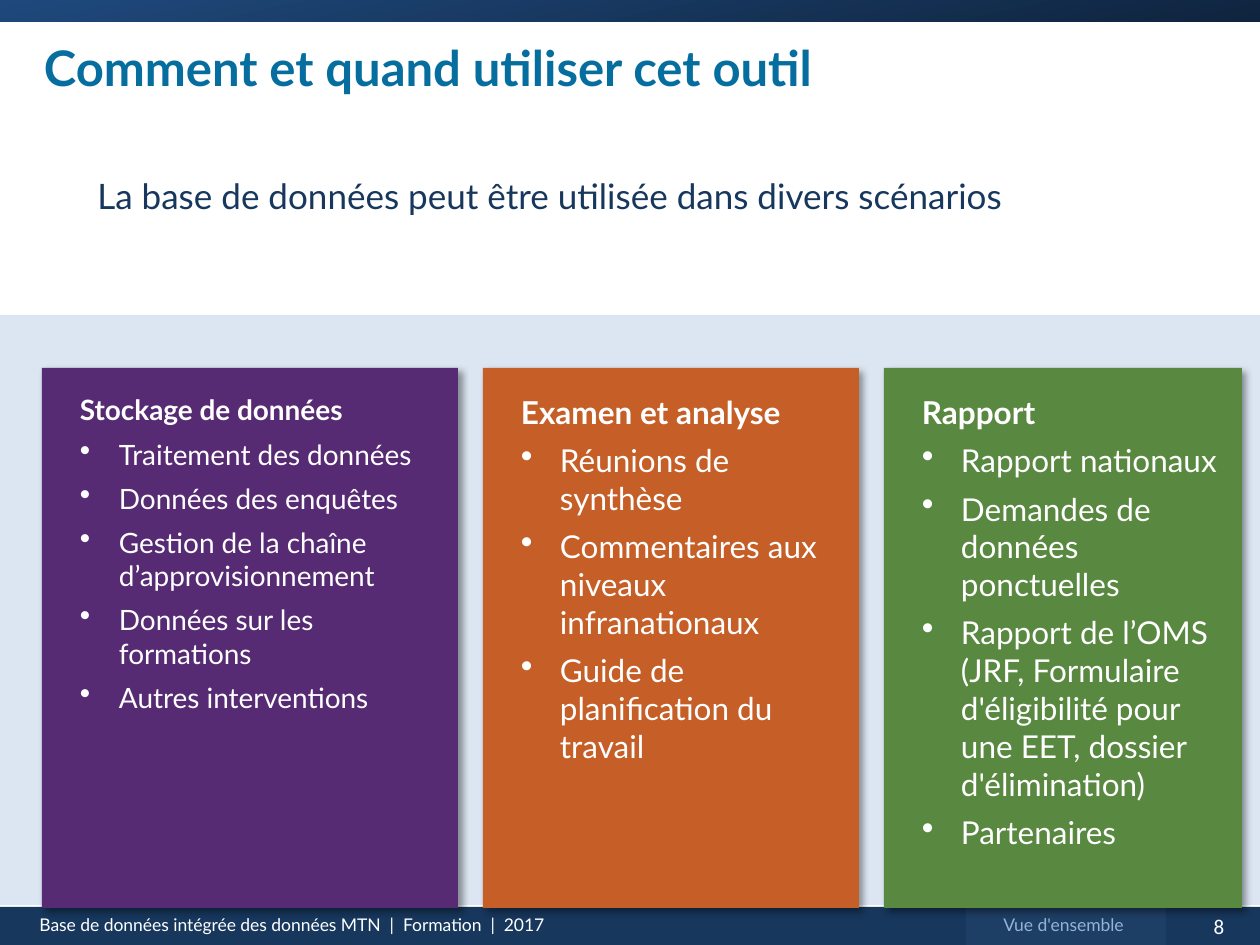
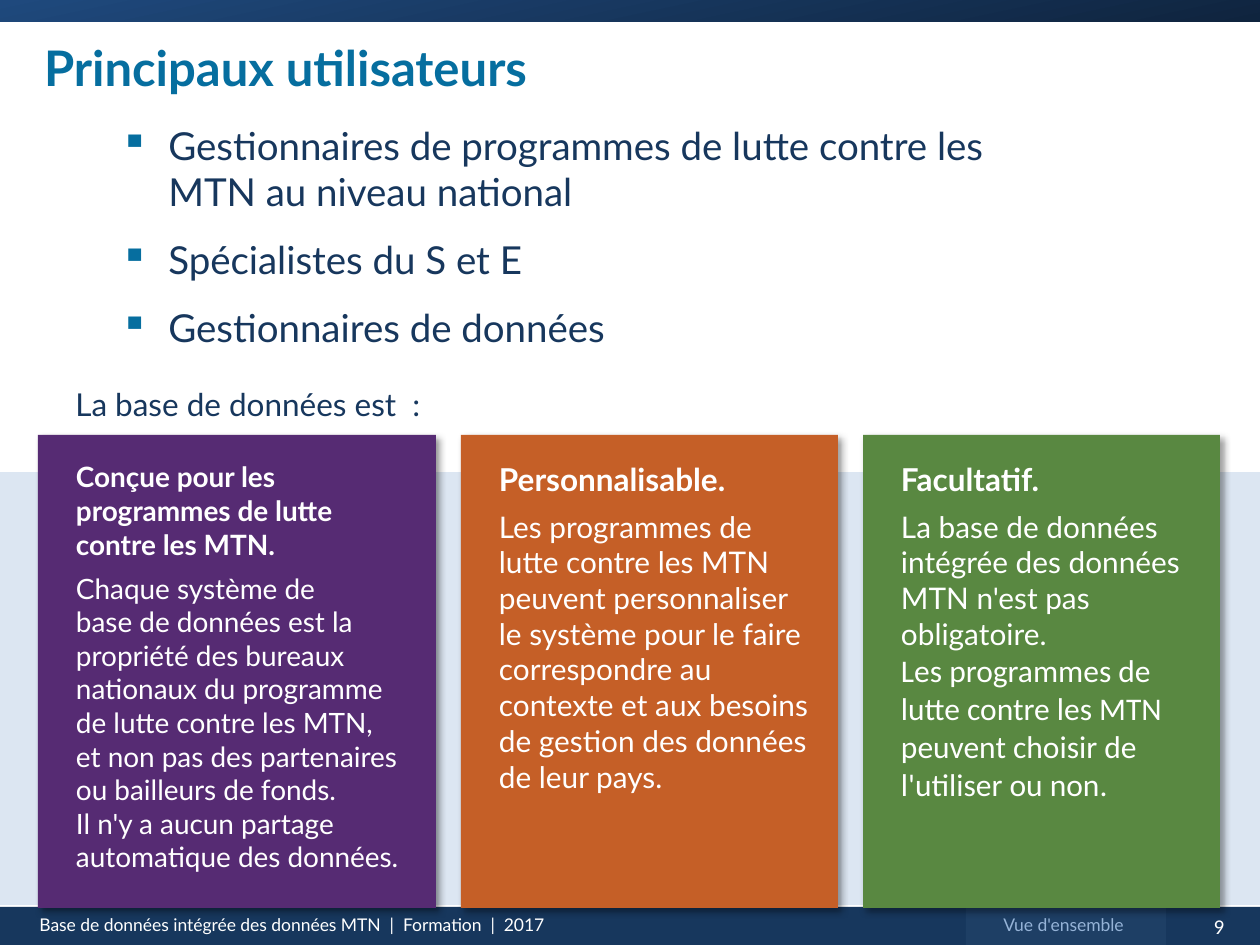
import copy
from collections import namedtuple

import lxml.etree
import pptx
import pptx.dml.color
import pptx.enum.shapes
import pptx.enum.text
import pptx.oxml.ns
import pptx.util

Color = pptx.dml.color.RGBColor
Shape = pptx.enum.shapes.MSO_SHAPE
Align = pptx.enum.text.PP_ALIGN
Anchor = pptx.enum.text.MSO_ANCHOR
qn = pptx.oxml.ns.qn

WHITE = Color(0xFF, 0xFF, 0xFF)
NAVY = Color(0x17, 0x37, 0x5D)
NAVY_TAB = Color(0x1E, 0x3F, 0x65)
BAND_LIGHT = Color(0x1F, 0x49, 0x7D)
BAND_DARK = Color(0x0F, 0x24, 0x3E)
PALE = Color(0xDC, 0xE6, 0xF2)
SOFT_BLUE = Color(0x95, 0xB3, 0xD7)
TEAL = Color(0x06, 0x6E, 0x9F)
PURPLE = Color(0x56, 0x2B, 0x73)
ORANGE = Color(0xC5, 0x5F, 0x27)
GREEN = Color(0x59, 0x88, 0x41)

SLIDE_WIDTH, SLIDE_HEIGHT = 1260, 945
COLUMN_GAP = 25
COLUMN_BOTTOM = 908
PALE_BOTTOM = 905
FOOTER_TOP = 907

Box = namedtuple("Box", "left top width height")
Style = namedtuple(
    "Style",
    "size color bold font align before after margin hang bullet bullet_color bullet_size",
    defaults=(WHITE, False, "Lato", Align.LEFT, 0, 0, 0, 0, None, None, None),
)


def px(length):
    return pptx.util.Emu(round(length * 914400 / 126))


def add_panel(page, box, fill=None, kind=Shape.RECTANGLE):
    panel = page.shapes.add_shape(kind, *map(px, box))
    panel.shadow.inherit = False
    panel.line.fill.background()
    if fill is None:
        panel.fill.background()
    else:
        panel.fill.solid()
        panel.fill.fore_color.rgb = fill
    return panel


def add_shadow(panel):
    effects = panel.element.spPr.find(qn("a:effectLst"))
    shadow = lxml.etree.SubElement(
        effects, qn("a:outerShdw"), blurRad="50800", dist="38100", dir="2700000", algn="tl", rotWithShape="0"
    )
    black = lxml.etree.SubElement(shadow, qn("a:srgbClr"), val="000000")
    lxml.etree.SubElement(black, qn("a:alpha"), val="40000")


def set_margins(frame, left, top, right, bottom):
    frame.margin_left, frame.margin_top = px(left), px(top)
    frame.margin_right, frame.margin_bottom = px(right), px(bottom)


def set_indent(para, style):
    properties = para._p.get_or_add_pPr()
    properties.set("marL", str(px(style.margin)))
    properties.set("indent", str(px(-style.hang)))
    if style.bullet_color is not None:
        tint = lxml.etree.SubElement(properties, qn("a:buClr"))
        lxml.etree.SubElement(tint, qn("a:srgbClr"), val=str(style.bullet_color))
    if style.bullet_size is not None:
        lxml.etree.SubElement(properties, qn("a:buSzPct"), val=str(style.bullet_size * 1000))
    if style.bullet is not None:
        lxml.etree.SubElement(properties, qn("a:buChar"), char=style.bullet)


def format_span(span, style):
    span.font.size = pptx.util.Pt(style.size)
    span.font.name = style.font
    span.font.bold = style.bold
    span.font.color.rgb = style.color


def write_text(frame, items):
    frame.word_wrap = True
    frame.vertical_anchor = Anchor.TOP
    for index, (text, style) in enumerate(items):
        para = frame.add_paragraph() if index else frame.paragraphs[0]
        para.text = text
        para.alignment = style.align
        para.space_before = pptx.util.Pt(style.before)
        para.space_after = pptx.util.Pt(style.after)
        set_indent(para, style)
        for span in para.runs:
            format_span(span, style)
        for line_end in para._p.findall(qn("a:br")):
            line_end.insert(0, copy.deepcopy(para.runs[0]._r.rPr))


def add_text(page, box, items):
    label = page.shapes.add_textbox(*map(px, box))
    write_text(label.text_frame, items)


def add_top_band(page, box):
    band = add_panel(page, box, BAND_LIGHT)
    band.fill.gradient()
    band.fill.gradient_angle = 282
    for stop, color in zip(band.fill.gradient_stops, (BAND_LIGHT, BAND_DARK)):
        stop.color.rgb = color


def add_footer(page, box, number):
    left, top = box.left, box.top
    add_panel(page, box, NAVY)
    add_text(page, Box(left + 1178, top, 82, 38), [(number, Style(12, font="Calibri", align=Align.CENTER))])
    add_text(
        page,
        Box(left + 27, top + 1, 571, 34),
        [("Base de données intégrée des données MTN  |  Formation  |  2017", Style(10))],
    )
    tab = Box(left + 966, top, 200, box.height)
    add_panel(page, tab, NAVY_TAB)
    add_text(
        page,
        Box(tab.left, top + 1, 195, 34),
        [("Vue d'ensemble", Style(10, SOFT_BLUE, align=Align.CENTER))],
    )


def add_title(page, box, text):
    title = add_panel(page, box, kind=Shape.ROUND_2_SAME_RECTANGLE)
    title.adjustments[0] = 0
    write_text(title.text_frame, [(text, Style(28, TEAL, True))])
    title.text_frame.vertical_anchor = Anchor.MIDDLE
    set_margins(title.text_frame, 25, 6, 25, 6)


def add_column(page, box, fill, items):
    column = add_panel(page, box, fill)
    add_shadow(column)
    write_text(column.text_frame, items)
    set_margins(column.text_frame, 38, 25, 25, 0)
    return column


def add_columns(page, left, top, widths, contents):
    columns = []
    for width, fill, items in zip(widths, (PURPLE, ORANGE, GREEN), contents):
        box = Box(left, top, width, COLUMN_BOTTOM - top)
        columns.append(add_column(page, box, fill, items))
        left += width + COLUMN_GAP
    return columns


def heading(text, size):
    return text, Style(size, bold=True, after=6)


def bulleted(title, points, size):
    point = Style(size, after=6, margin=39, hang=39, bullet="•", bullet_size=110)
    return [heading(title, size)] + [(text, point) for text in points]


def start_page(deck, number, title, title_width, pale_top):
    page = deck.slides.add_slide(deck.slide_layouts[6])
    add_top_band(page, Box(0, 0, SLIDE_WIDTH, 22))
    add_footer(page, Box(0, FOOTER_TOP, SLIDE_WIDTH, SLIDE_HEIGHT - FOOTER_TOP), number)
    add_panel(page, Box(0, pale_top, SLIDE_WIDTH, PALE_BOTTOM - pale_top), PALE)
    add_title(page, Box(19, 29, title_width, 76), title)
    return page


def build_scenarios(deck):
    page = start_page(deck, "8", "Comment et quand utiliser cet outil", 881, 315)
    add_text(
        page,
        Box(60, 168, 1147, 210),
        [("La base de données peut être utilisée dans divers scénarios", Style(20, NAVY, after=8, margin=25))],
    )
    storage = [
        "Traitement des données",
        "Données des enquêtes",
        "Gestion de la chaîne d’approvisionnement",
        "Données sur les formations",
        "Autres interventions",
    ]
    review = [
        "Réunions de synthèse",
        "Commentaires aux niveaux infranationaux",
        "Guide de planification du travail",
    ]
    reports = [
        "Rapport nationaux",
        "Demandes de données ponctuelles",
        "Rapport de l’OMS (JRF, Formulaire d'éligibilité pour une EET, dossier d'élimination)",
        "Partenaires",
    ]
    contents = [
        bulleted("Stockage de données", storage, 16),
        bulleted("Examen et analyse", review, 18),
        bulleted("Rapport", reports, 18),
    ]
    add_columns(page, 42, 368, (416, 376, 358), contents)


def build_users(deck):
    page = start_page(deck, "9", "Principaux utilisateurs", 575, 472)
    user = Style(22, NAVY, before=4.4, after=8, margin=72, hang=48, bullet="▪", bullet_color=TEAL)
    users = [
        "Gestionnaires de programmes de lutte contre les MTN au niveau national",
        "Spécialistes du S et E",
        "Gestionnaires de données",
    ]
    add_text(page, Box(84, 116, 966, 665), [(text, user) for text in users])
    add_text(page, Box(63, 379, 438, 50), [("La base de données est  :", Style(18, NAVY))])
    contents = [
        [
            heading("Conçue pour les programmes de lutte contre les MTN.", 16),
            (
                "Chaque système de\vbase de données est la propriété des bureaux nationaux "
                "du programme de lutte contre les MTN,\vet non pas des partenaires ou bailleurs de fonds."
                "\vIl n'y a aucun partage automatique des données.",
                Style(16, after=3),
            ),
        ],
        [
            heading("Personnalisable.", 18),
            (
                "Les programmes de lutte contre les MTN peuvent personnaliser\vle système pour le faire "
                "correspondre au contexte et aux besoins de gestion des données de leur pays.",
                Style(17, after=6),
            ),
        ],
        [
            heading("Facultatif.", 18),
            (
                "La base de données intégrée des données MTN n'est pas obligatoire."
                "\vLes programmes de\vlutte contre les MTN peuvent choisir de l'utiliser ou non.",
                Style(17),
            ),
        ],
    ]
    optional = add_columns(page, 38, 435, (398, 377, 357), contents)[-1]
    for span in optional.text_frame.paragraphs[1].runs[1:]:
        format_span(span, Style(18, font="Calibri"))


def main():
    deck = pptx.Presentation()
    deck.slide_width, deck.slide_height = px(SLIDE_WIDTH), px(SLIDE_HEIGHT)
    build_scenarios(deck)
    build_users(deck)
    deck.save("out.pptx")


if __name__ == "__main__":
    main()
